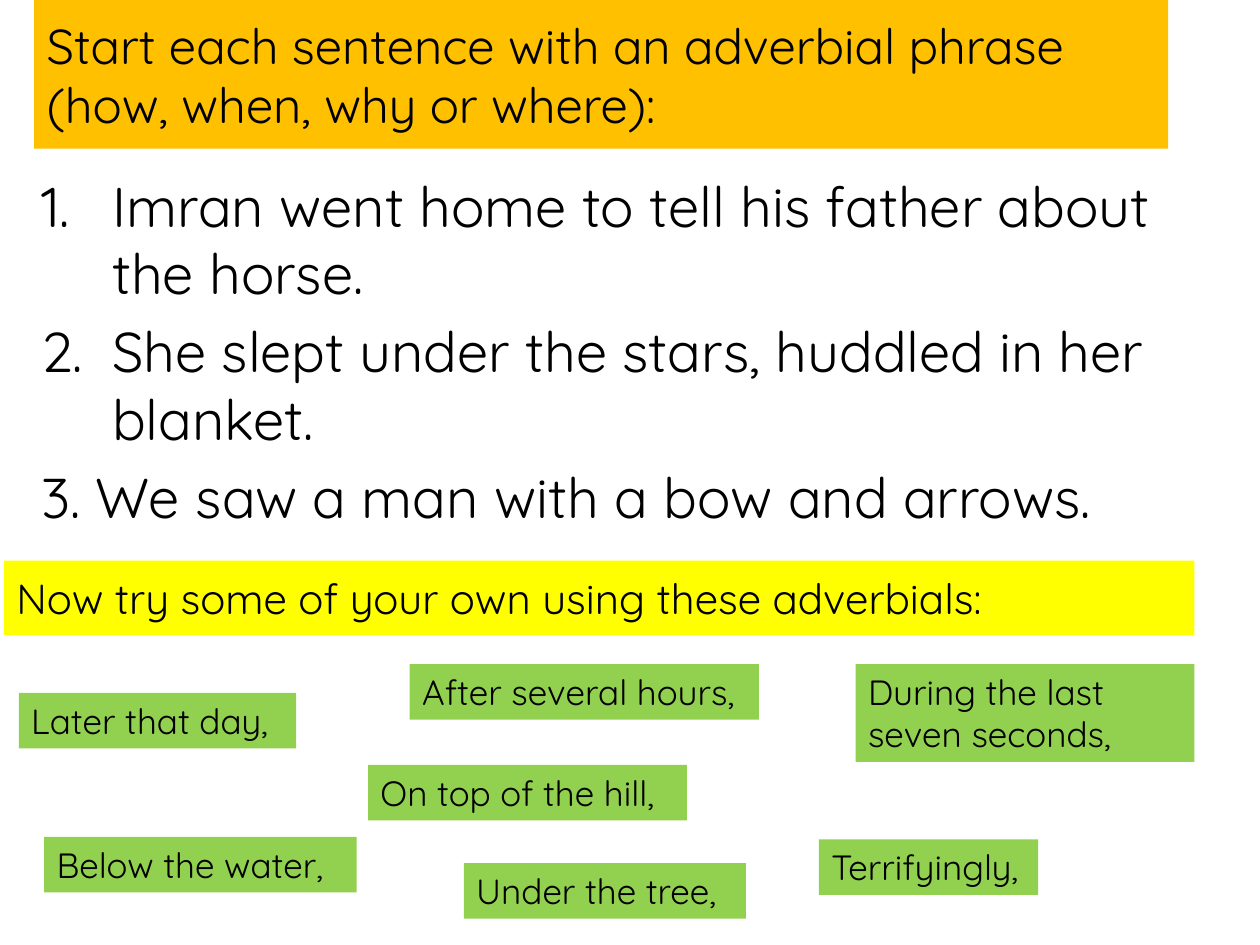
from lxml import etree
from pptx import Presentation
from pptx import util as u
from pptx.dml import color
from pptx.enum import shapes, text
from pptx.oxml import ns

COLORS = {"title": "FFC000", "task": "FFFF00", "card": "92D050", "text": "000000"}
FONT = "Quicksand"

prs = Presentation()
prs.slide_width, prs.slide_height = u.Cm(25.4), u.Cm(19.05)
s = prs.slides.add_slide(prs.slide_layouts[6])


def add_run(p, words, size):
    r = p.add_run()
    r.text = words
    for name, value in {"name": FONT, "size": u.Pt(size)}.items():
        setattr(r.font, name, value)
    r.font.color.rgb = color.RGBColor.from_string(COLORS["text"])


def add_box(words, box, fill, size, anchor):
    sp = s.shapes.add_shape(shapes.MSO_SHAPE.RECTANGLE, *map(u.Cm, box))
    sp.shadow.inherit = False
    sp.fill.solid()
    sp.fill.fore_color.rgb = color.RGBColor.from_string(COLORS[fill])
    sp.line.fill.background()
    tf = sp.text_frame
    for name, value in {"word_wrap": True, "vertical_anchor": anchor}.items():
        setattr(tf, name, value)
    p = tf.paragraphs[0]
    p.alignment = text.PP_ALIGN.LEFT
    add_run(p, words, size)


# Title and task bars
add_box("Start each sentence with an adverbial phrase (how, when, why or where):",
        (0.69, 0, 22.86, 3), "title", 28, text.MSO_ANCHOR.MIDDLE)
add_box("Now try some of your own using these adverbials:",
        (0.08, 11.3, 24, 1.5), "task", 24, text.MSO_ANCHOR.MIDDLE)

# Adverbial cards: words, left, top, width, lines
cards = [
    ("Later that day,", 0.38, 13.97, 5.59, 1),
    ("After several hours,", 8.26, 13.39, 7.04, 1),
    ("Below the water,", 0.89, 16.87, 6.3, 1),
    ("During the last seven seconds,", 17.25, 13.39, 6.83, 2),
    ("Under the tree,", 9.35, 17.4, 5.69, 1),
    ("On top of the hill,", 7.42, 15.42, 6.43, 1),
    ("Terrifyingly,", 16.51, 16.92, 4.42, 1),
]
for words, left, top, width, lines in cards:
    height = 0.27 + 0.85 * lines
    add_box(words, (left, top, width, height), "card", 20, text.MSO_ANCHOR.TOP)

# Sentences to extend; the first two are numbered with a hanging indent
sentences = [
    ("Imran went home to tell his father about the horse.", True),
    ("She slept under the stars, huddled in her blanket.", True),
    ("3. We saw a man with a bow and arrows.", False),
]
tf = s.shapes.add_textbox(*map(u.Cm, (0.58, 3.33, 23.93, 7.97))).text_frame
tf.word_wrap = True
for i, (words, numbered) in enumerate(sentences):
    p = tf.add_paragraph() if i else tf.paragraphs[0]
    p.space_before = u.Pt(6.4)
    add_run(p, words, 32)
    if numbered:
        pPr = p._p.get_or_add_pPr()
        pPr.set("marL", str(u.Cm(1.43)))
        pPr.set("indent", str(-u.Cm(1.43)))
        etree.SubElement(pPr, ns.qn("a:buFont"), typeface=FONT)
        etree.SubElement(pPr, ns.qn("a:buAutoNum"), type="arabicPeriod")

prs.save("out.pptx")
